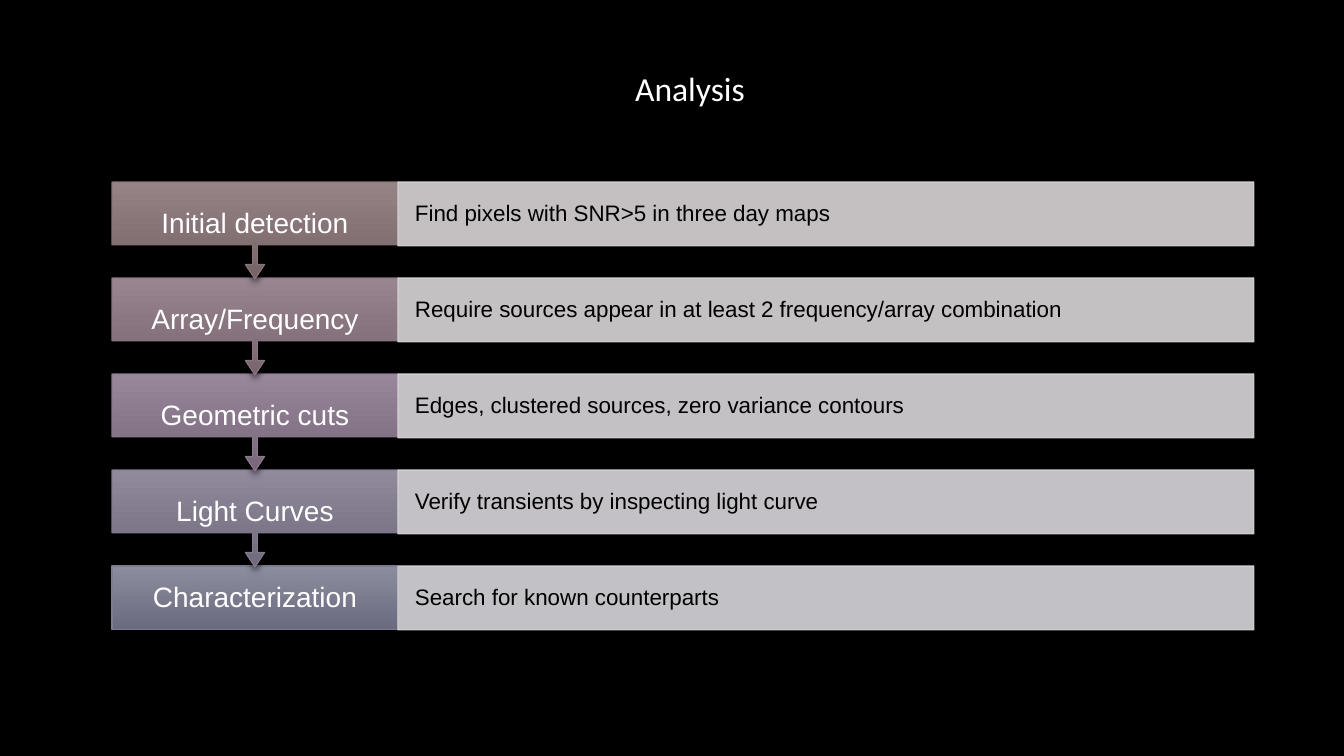
import pptx
import pptx.util
import pptx.dml.color
import pptx.enum.shapes
import pptx.enum.text
import pptx.oxml
import pptx.oxml.ns

RGBColor = pptx.dml.color.RGBColor
MSO_SHAPE = pptx.enum.shapes.MSO_SHAPE
PP_ALIGN = pptx.enum.text.PP_ALIGN
MSO_ANCHOR = pptx.enum.text.MSO_ANCHOR

BLACK = RGBColor(0x00, 0x00, 0x00)
WHITE = RGBColor(0xFF, 0xFF, 0xFF)

EMU_PER_PX = 914400 / 100.8
ROW_PITCH = 96
BODY_HEIGHT = 64
CALLOUT_HEIGHT = 97
LABEL_WIDTH = 286

# Label, detail, gradient top, gradient bottom, label outline, detail colour
STEPS = [
    ("Initial detection", "Find pixels with SNR>5 in three day maps",
     RGBColor(0x95, 0x83, 0x85), RGBColor(0x76, 0x63, 0x65),
     RGBColor(0x89, 0x73, 0x76), RGBColor(0xDA, 0xD5, 0xD6)),
    ("Array/Frequency", "Require sources appear in at least 2 frequency/array combination",
     RGBColor(0x98, 0x85, 0x90), RGBColor(0x78, 0x65, 0x70),
     RGBColor(0x8B, 0x75, 0x83), RGBColor(0xDA, 0xD6, 0xD9)),
    ("Geometric cuts", "Edges, clustered sources, zero variance contours",
     RGBColor(0x98, 0x87, 0x9A), RGBColor(0x78, 0x67, 0x7A),
     RGBColor(0x8C, 0x77, 0x8E), RGBColor(0xDA, 0xD6, 0xDB)),
    ("Light Curves", "Verify transients by inspecting light curve",
     RGBColor(0x91, 0x89, 0x9C), RGBColor(0x71, 0x69, 0x7C),
     RGBColor(0x83, 0x7A, 0x90), RGBColor(0xD9, 0xD7, 0xDB)),
    ("Characterization", "Search for known counterparts",
     RGBColor(0x8B, 0x8C, 0x9E), RGBColor(0x6A, 0x6B, 0x7E),
     RGBColor(0x7C, 0x7D, 0x92), RGBColor(0xD7, 0xD7, 0xDC)),
]


def px(length):
    return pptx.util.Emu(round(length * EMU_PER_PX))


def write_text(shape, text, size, font_name, color, align, margins):
    frame = shape.text_frame
    frame.word_wrap = True
    frame.vertical_anchor = MSO_ANCHOR.MIDDLE
    (frame.margin_left, frame.margin_top,
     frame.margin_right, frame.margin_bottom) = map(px, margins)
    frame.text = text
    paragraph = frame.paragraphs[0]
    paragraph.alignment = align
    paragraph.line_spacing = 0.9
    paragraph.font.size = pptx.util.Pt(size)
    paragraph.font.name = font_name
    paragraph.font.color.rgb = color


def add_soft_shadow(shape):
    shape.shadow.inherit = False
    effects = shape._element.spPr.find(pptx.oxml.ns.qn("a:effectLst"))
    effects.append(pptx.oxml.parse_xml(
        f'<a:outerShdw {pptx.oxml.ns.nsdecls("a")} blurRad="63500" dist="25400" '
        'dir="5400000" rotWithShape="0"><a:srgbClr val="000000">'
        '<a:alpha val="60000"/></a:srgbClr></a:outerShdw>'))


def set_opacity(shape, percent):
    for color in shape._element.spPr.iter(pptx.oxml.ns.qn("a:srgbClr")):
        color.append(pptx.oxml.parse_xml(
            f'<a:alpha {pptx.oxml.ns.nsdecls("a")} val="{percent * 1000}"/>'))


def add_title(slide, left, top, width, height):
    title = slide.shapes.title
    title.left, title.top, title.width, title.height = map(px, (left, top, width, height))
    write_text(title, "Analysis", 24, "Calibri", WHITE, PP_ALIGN.CENTER, (9, 5, 9, 5))


def add_label(slide, left, top, width, text, colors, is_last):
    if is_last:
        kind, height, text_drop = MSO_SHAPE.RECTANGLE, BODY_HEIGHT, 0
    else:
        kind, height, text_drop = MSO_SHAPE.DOWN_ARROW_CALLOUT, CALLOUT_HEIGHT, 22
    label = slide.shapes.add_shape(kind, px(left), px(top), px(width), px(height))
    if not is_last:
        for index, value in enumerate((0.05, 0.1, 0.15, 0.65)):
            label.adjustments[index] = value
    label.fill.gradient()
    label.fill.gradient_angle = 270
    for stop, color in zip(label.fill.gradient_stops, colors):
        stop.color.rgb = color
    label.line.color.rgb = colors[2]
    label.line.width = pptx.util.Pt(0.75)
    add_soft_shadow(label)
    write_text(label, text, 20, "Arial", WHITE, PP_ALIGN.CENTER, (20, text_drop, 20, 0))


def add_detail(slide, left, top, width, text, color):
    detail = slide.shapes.add_shape(
        MSO_SHAPE.RECTANGLE, px(left), px(top), px(width), px(BODY_HEIGHT))
    detail.fill.solid()
    detail.fill.fore_color.rgb = color
    detail.line.color.rgb = color
    detail.line.width = pptx.util.Pt(0.75)
    set_opacity(detail, 90)
    detail.shadow.inherit = False
    write_text(detail, text, 16, "Arial", BLACK, PP_ALIGN.LEFT, (17, 0, 17, 0))


def add_process(slide, left, top, width):
    # Bottom row first, so that each arrow lies over the row below it
    for row in reversed(range(len(STEPS))):
        label, detail, *label_colors, detail_color = STEPS[row]
        row_top = top + row * ROW_PITCH
        add_label(slide, left, row_top, LABEL_WIDTH, label, label_colors,
                  row == len(STEPS) - 1)
        add_detail(slide, left + LABEL_WIDTH, row_top, width - LABEL_WIDTH,
                   detail, detail_color)


def main():
    presentation = pptx.Presentation()
    presentation.slide_width = px(1344)
    presentation.slide_height = px(756)
    slide = presentation.slides.add_slide(presentation.slide_layouts[5])
    slide.background.fill.solid()
    slide.background.fill.fore_color.rgb = BLACK
    add_title(slide, 596, 37, 188, 107)
    add_process(slide, 112, 182, 1142)
    presentation.save("out.pptx")


if __name__ == "__main__":
    main()
